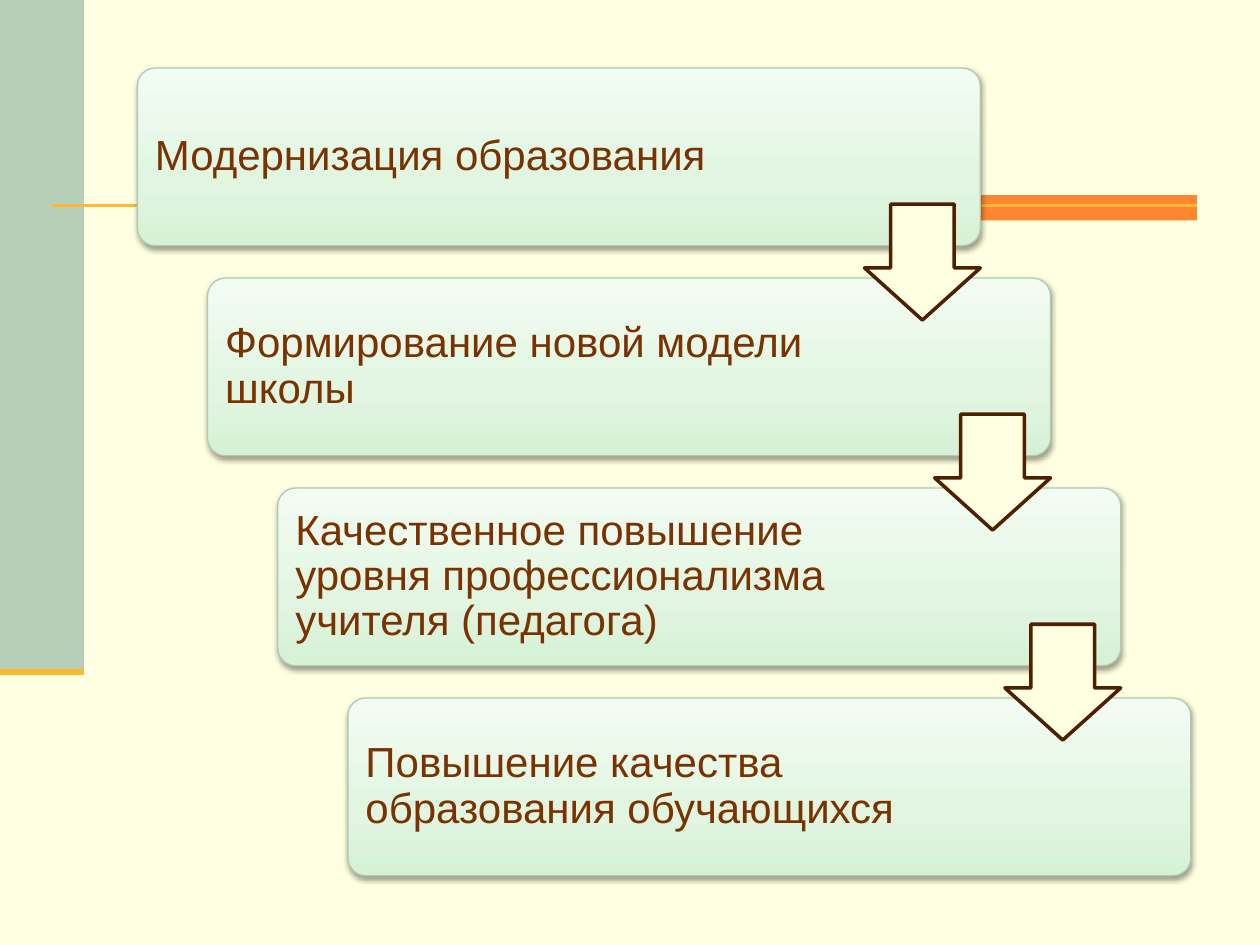
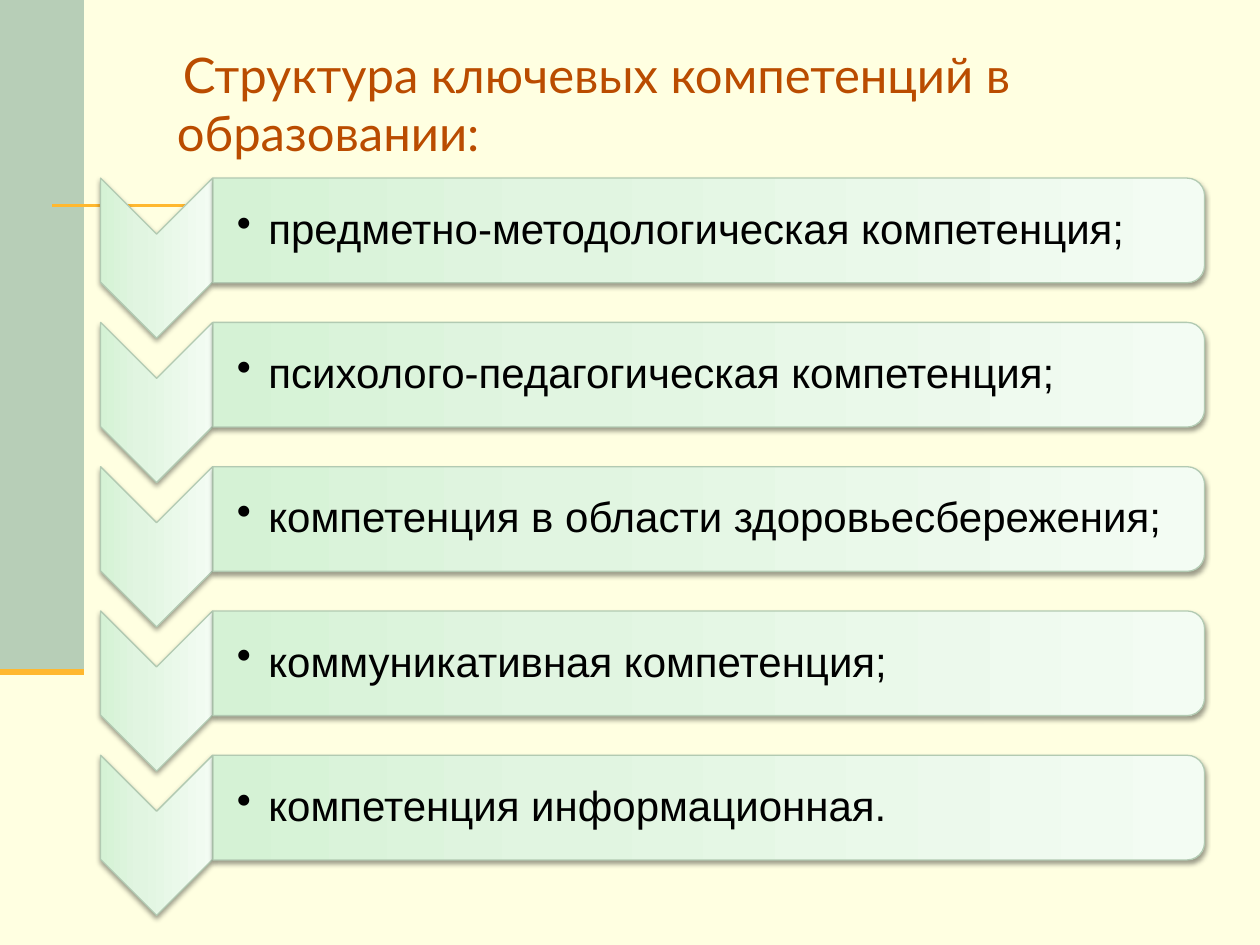
import pptx
import pptx.dml.color
import pptx.enum.shapes
import pptx.enum.text
import pptx.oxml
import pptx.oxml.ns
import pptx.util
from lxml import etree

Pt = pptx.util.Pt
RGBColor = pptx.dml.color.RGBColor
Shape = pptx.enum.shapes.MSO_SHAPE
Anchor = pptx.enum.text.MSO_ANCHOR
qn = pptx.oxml.ns.qn

CREAM = RGBColor(0xFF, 0xFF, 0xE1)
SAGE = RGBColor(0xB7, 0xCE, 0xB7)
ORANGE = RGBColor(0xFF, 0x86, 0x30)
AMBER = RGBColor(0xFF, 0xB8, 0x2F)
RUST = RGBColor(0xBA, 0x4C, 0x00)
BROWN = RGBColor(0x79, 0x32, 0x00)
DARK_BROWN = RGBColor(0x4E, 0x20, 0x00)
EDGE_GREEN = RGBColor(0xB2, 0xCA, 0xB2)
BLACK = RGBColor(0x00, 0x00, 0x00)
MINT_STOPS = (
    (0, RGBColor(0xD5, 0xF2, 0xD5)),
    (35, RGBColor(0xE1, 0xF5, 0xE1)),
    (100, RGBColor(0xF3, 0xFC, 0xF3)),
)

STAGES = (
    "Модернизация образования",
    "Формирование новой модели школы",
    "Качественное повышение уровня профессионализма учителя (педагога)",
    "Повышение качества образования обучающихся",
)
COMPETENCES = (
    "предметно-методологическая компетенция;",
    "психолого-педагогическая компетенция;",
    "компетенция в области здоровьесбережения;",
    "коммуникативная компетенция;",
    "компетенция информационная.",
)


def add_xml(parent, tag, **attributes):
    element = etree.SubElement(parent, qn(tag))
    for name, value in attributes.items():
        element.set(name, str(value))
    return element


class Deck:
    def __init__(self):
        self.presentation = pptx.Presentation()
        self.presentation.slide_width = Pt(720)
        self.presentation.slide_height = Pt(540)
        self.slide = None

    def add_slide(self):
        self.slide = self.presentation.slides.add_slide(self.presentation.slide_layouts[6])
        background = self.slide.background.fill
        background.solid()
        background.fore_color.rgb = CREAM
        self.add_shape(Shape.RECTANGLE, 0, 0, 48, 384, SAGE)
        self.add_shape(Shape.RECTANGLE, 540, 111.5, 144, 14.5, ORANGE)
        self.add_line(30, 117.5, 684, 117.5, 1.5)
        self.add_line(0, 384, 48, 384, 3.5)

    def add_line(self, left, top, right, bottom, width):
        connector = self.slide.shapes.add_connector(
            pptx.enum.shapes.MSO_CONNECTOR.STRAIGHT, Pt(left), Pt(top), Pt(right), Pt(bottom))
        connector.line.color.rgb = AMBER
        connector.line.width = Pt(width)
        add_xml(connector.element.spPr, "a:effectLst")

    def add_shape(self, kind, left, top, width, height, color=None,
                  line_color=None, line_width=0.75, adjustments=()):
        shape = self.slide.shapes.add_shape(kind, Pt(left), Pt(top), Pt(width), Pt(height))
        shape.shadow.inherit = False
        for index, value in enumerate(adjustments):
            shape.adjustments[index] = value
        if color is not None:
            shape.fill.solid()
            shape.fill.fore_color.rgb = color
        if line_color is None:
            shape.line.fill.background()
        else:
            shape.line.color.rgb = line_color
            shape.line.width = Pt(line_width)
        return shape

    def add_mint(self, kind, left, top, width, height, adjustments=()):
        shape = self.add_shape(kind, left, top, width, height,
                               line_color=EDGE_GREEN, adjustments=adjustments)
        shape.fill.gradient()
        shape.fill.gradient_angle = 90
        properties = shape.element.spPr
        stops = properties.find(qn("a:gradFill")).find(qn("a:gsLst"))
        for stop in list(stops):
            stops.remove(stop)
        for position, color in MINT_STOPS:
            stop = add_xml(stops, "a:gs", pos=position * 1000)
            add_xml(stop, "a:srgbClr", val=color)
        shadow = add_xml(properties.find(qn("a:effectLst")), "a:outerShdw", blurRad=Pt(3.1),
                         dist=Pt(1.6), dir=90 * 60000, rotWithShape=0)
        shadow_color = add_xml(shadow, "a:srgbClr", val=BLACK)
        add_xml(shadow_color, "a:alpha", val=38000)
        return shape

    def add_turned_mint(self, kind, left, top, width, height, adjustments=()):
        shift = (width - height) / 2
        shape = self.add_mint(kind, left + shift, top - shift, height, width, adjustments)
        shape.rotation = 90

    def add_text(self, text, left, top, width, height, color, margins, size=24, font="Arial",
                 anchor=Anchor.MIDDLE, line_spacing=0.9, indent=(0, 0), bullet=None):
        frame = self.slide.shapes.add_textbox(Pt(left), Pt(top), Pt(width), Pt(height)).text_frame
        frame.word_wrap = True
        frame.vertical_anchor = anchor
        frame.margin_left, frame.margin_top, frame.margin_right, frame.margin_bottom = map(Pt, margins)
        paragraph = frame.paragraphs[0]
        paragraph.text = text
        paragraph.line_spacing = line_spacing
        paragraph.font.size = Pt(size)
        paragraph.font.name = font
        paragraph.font.color.rgb = color
        properties = paragraph._p.get_or_add_pPr()
        properties.set("marL", str(Pt(indent[0])))
        properties.set("indent", str(Pt(indent[1])))
        if bullet:
            mark = etree.Element(qn("a:buChar"), char=bullet)
            properties.find(qn("a:defRPr")).addprevious(mark)


def build_stages(deck):
    deck.add_slide()
    corners = [(78.5 + 40.1 * step, 38.9 + 120 * step) for step in range(len(STAGES))]
    for (left, top), stage in zip(corners, STAGES):
        deck.add_mint(Shape.ROUNDED_RECTANGLE, left, top, 481.7, 101.5, (0.1,))
        deck.add_text(stage, left + 3, top + 3, 369, 95.5, BROWN, (7.2,) * 4)
    for left, top in corners[:-1]:
        deck.add_shape(Shape.DOWN_ARROW, left + 415.5, top + 77.8, 66.2, 66.2, CREAM,
                       DARK_BROWN, 2, (0.55, 0.45))


def build_competences(deck):
    deck.add_slide()
    deck.add_text("Структура ключевых компетенций в образовании:", 67, 21.6, 629.3, 144.7, RUST,
                  (7.2, 3.6, 7.2, 3.6), size=28, font="Lato", anchor=Anchor.TOP,
                  line_spacing=1.0, indent=(27, 3.5))
    for row, competence in enumerate(COMPETENCES):
        top = 101.8 + 82.45 * row
        deck.add_turned_mint(Shape.CHEVRON, 57.5, top, 64, 91.5, (0.5,))
        deck.add_turned_mint(Shape.ROUND_2_SAME_RECTANGLE, 121.7, top, 566.6, 59.8)
        deck.add_text(competence, 121.7, top + 3, 563.8, 54, BLACK, (13.7, 1.5, 1.5, 1.5),
                      indent=(18, -18), bullet="•")


def main():
    deck = Deck()
    build_stages(deck)
    build_competences(deck)
    deck.presentation.save("out.pptx")


if __name__ == "__main__":
    main()
